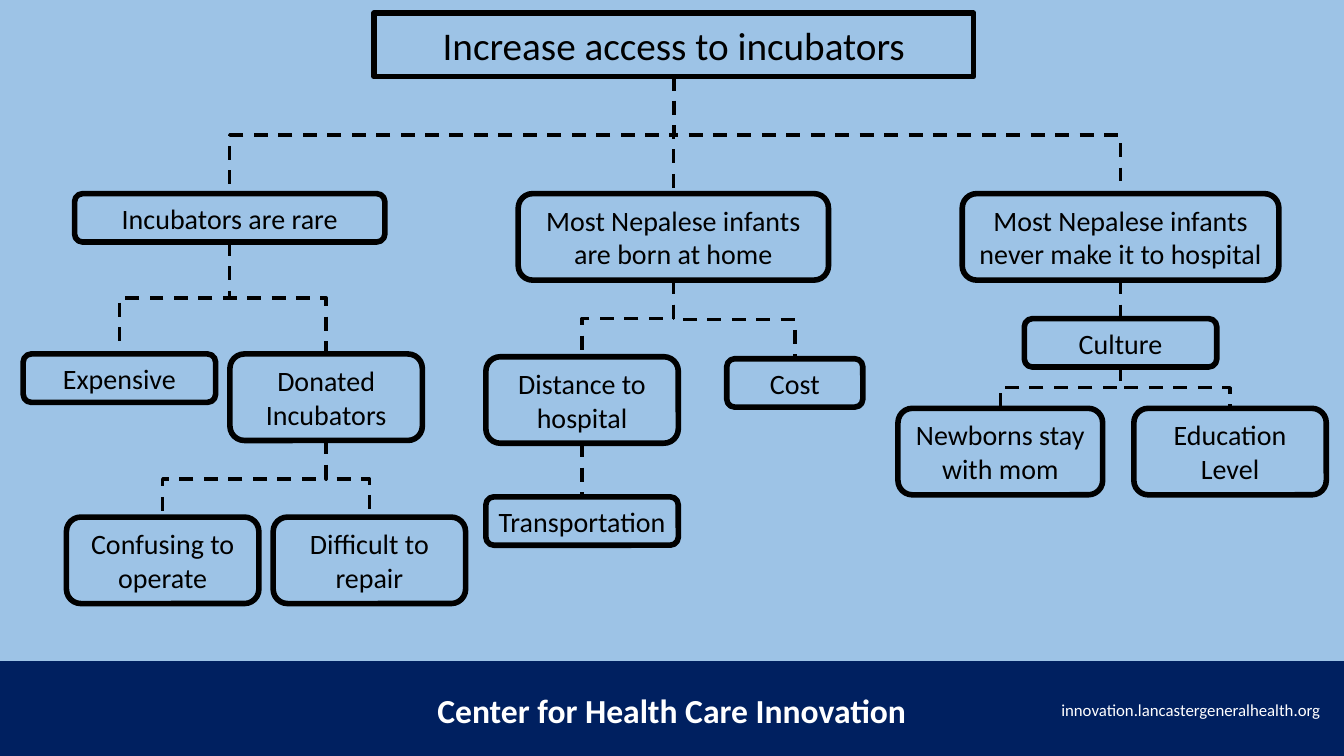
from pptx import Presentation
from pptx.dml.color import RGBColor
from pptx.enum.dml import MSO_LINE
from pptx.enum.shapes import MSO_CONNECTOR, MSO_SHAPE
from pptx.enum.text import MSO_ANCHOR, MSO_AUTO_SIZE, PP_ALIGN
from pptx.oxml.ns import qn
from pptx.util import Cm, Pt
from lxml.etree import SubElement

SKY = RGBColor(0x9D, 0xC3, 0xE6)
NAVY = RGBColor(0x00, 0x20, 0x60)
BLACK = RGBColor(0, 0, 0)
WHITE = RGBColor(255, 255, 255)

WIDE, HIGH = 33.87, 19.05
HEIGHTS = {1: 1.22, 2: 2.18}
GOAL = ("Increase access to incubators", 16.98, 0.33, 15.11, 1.6)

# parent, text, centre x, top, width, rows
CAUSES = [
    (GOAL[0], "Incubators are rare", 5.79, 4.88, 7.82, 1),
    (GOAL[0], "Most Nepalese infants are born at home", 16.97, 4.88, 7.82, 2),
    (GOAL[0], "Most Nepalese infants never make it to hospital", 28.24, 4.88, 7.98, 2),
    ("Incubators are rare", "Expensive", 3.01, 8.92, 4.85, 1),
    ("Incubators are rare", "Donated Incubators", 8.22, 8.92, 4.85, 2),
    ("Donated Incubators", "Confusing to operate", 4.1, 13.03, 4.85, 2),
    ("Donated Incubators", "Difficult to repair", 9.31, 13.03, 4.85, 2),
    ("Most Nepalese infants are born at home", "Distance to hospital", 14.67, 8.99, 4.85, 2),
    ("Most Nepalese infants are born at home", "Cost", 20.03, 9.04, 3.43, 1),
    ("Distance to hospital", "Transportation", 14.67, 12.52, 4.85, 1),
    ("Most Nepalese infants never make it to hospital", "Culture", 28.24, 8.03, 4.85, 1),
    ("Culture", "Newborns stay with mom", 25.21, 10.29, 5.16, 2),
    ("Culture", "Education Level", 31, 10.29, 4.85, 2),
]

FOOTER = [
    ("Center for Health Care Innovation", 10.54, 17.25, 12.78, 1.27,
     dict(size=24, bold=True, color=WHITE)),
    ("innovation.lancastergeneralhealth.org", 24.21, 17.5, 9.32, 0.76,
     dict(size=12, color=WHITE, align=PP_ALIGN.RIGHT)),
]


def write(shape, text, size=20, bold=False, color=BLACK, align=PP_ALIGN.CENTER):
    frame = shape.text_frame
    frame.text = text
    frame.word_wrap = True
    frame.auto_size = MSO_AUTO_SIZE.NONE
    frame.vertical_anchor = MSO_ANCHOR.MIDDLE
    para = frame.paragraphs[0]
    para.alignment = align
    font = para.runs[0].font
    font.name, font.size, font.bold = "Calibri", Pt(size), bold
    font.color.rgb = color


def outline(shape):
    shape.fill.background()
    shape.line.color.rgb = BLACK
    shape.line.width = Pt(4)


def link(shapes, start, end):
    line = shapes.add_connector(MSO_CONNECTOR.ELBOW, 0, 0, 0, 0)
    line.begin_connect(start, 2)
    line.end_connect(end, 0)
    x1, y1 = start.left + start.width // 2, start.top + start.height
    x2, y2 = end.left + end.width // 2, end.top
    drop, shift = y2 - y1, abs(x2 - x1)
    line.width, line.height = drop, shift
    line.left = (x1 + x2 - drop) // 2
    line.top = (y1 + y2 - shift) // 2
    frame = line._element.spPr.xfrm
    frame.set("rot", str(90 * 60000))
    frame.flipH, frame.flipV = False, x2 > x1
    line.line.color.rgb = BLACK
    line.line.width = Pt(2.5)
    line.line.dash_style = MSO_LINE.DASH
    SubElement(line._element.spPr, qn("a:effectLst"))


def main():
    deck = Presentation()
    deck.slide_width, deck.slide_height = Cm(WIDE), Cm(HIGH)
    slide = deck.slides.add_slide(deck.slide_layouts[5])
    slide.background.fill.solid()
    slide.background.fill.fore_color.rgb = SKY
    shapes = slide.shapes

    band = shapes.add_shape(MSO_SHAPE.RECTANGLE, 0, Cm(16.66), Cm(WIDE), Cm(HIGH - 16.66))
    band.shadow.inherit = False
    band.fill.solid()
    band.fill.fore_color.rgb = NAVY
    band.line.fill.background()
    for text, left, top, width, height, style in FOOTER:
        write(shapes.add_textbox(Cm(left), Cm(top), Cm(width), Cm(height)), text, **style)

    text, mid, top, width, height = GOAL
    title = shapes.title
    title.left, title.top = Cm(mid - width / 2), Cm(top)
    title.width, title.height = Cm(width), Cm(height)
    shape = SubElement(title._element.spPr, qn("a:prstGeom"), prst="roundRect")
    SubElement(shape, qn("a:avLst"))
    outline(title)
    write(title, text, size=28)

    boxes = {text: title}
    for parent, text, mid, top, width, rows in CAUSES:
        box = shapes.add_shape(MSO_SHAPE.ROUNDED_RECTANGLE, Cm(mid - width / 2), Cm(top),
                               Cm(width), Cm(HEIGHTS[rows]))
        box.shadow.inherit = False
        outline(box)
        write(box, text)
        boxes[text] = box
        link(shapes, boxes[parent], box)

    deck.save("out.pptx")


if __name__ == "__main__":
    main()
